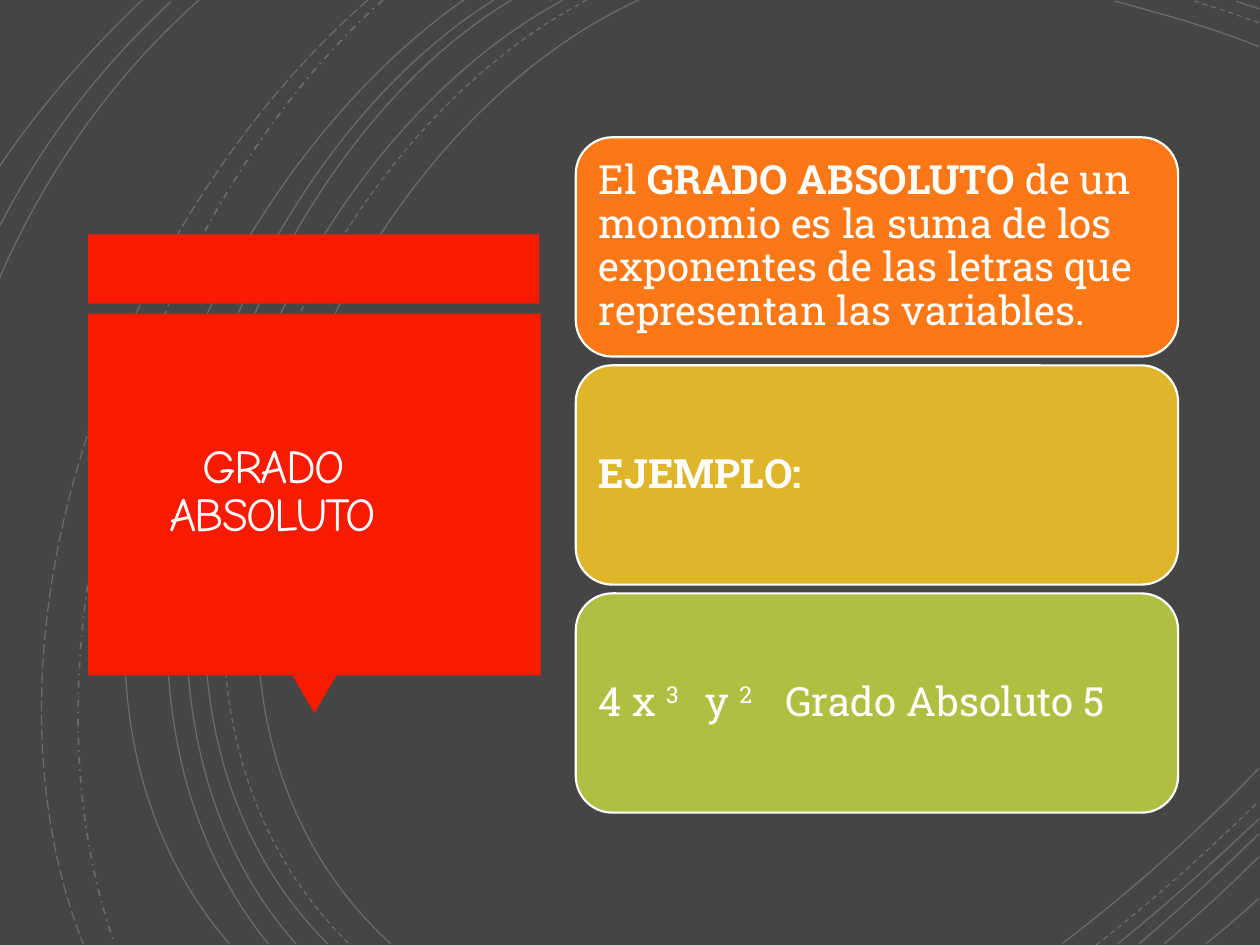
from pptx import Presentation
from pptx.dml.color import RGBColor
from pptx.enum.dml import MSO_LINE as Dash
from pptx.enum.shapes import MSO_SHAPE as Shape
from pptx.enum.text import MSO_ANCHOR as Anchor, PP_ALIGN as Align
from pptx.oxml.ns import qn
from pptx.util import Inches, Pt
from lxml.etree import SubElement

WHITE = RGBColor(0xFF, 0xFF, 0xFF)
CREAM = RGBColor(0xFF, 0xFE, 0xFF)
DARK = RGBColor(0x45, 0x45, 0x45)
RED = RGBColor(0xF8, 0x1B, 0x02)
ORANGE = RGBColor(0xFC, 0x77, 0x15)
GOLD = RGBColor(0xDF, 0xB6, 0x2A)
GREEN = RGBColor(0xAF, 0xBF, 0x41)
HEAD, BODY = "Comic Neue", "Roboto Slab"

ARCS = [
    ((5.07, 0), (2.56, 1.15), (0.83, 5.4), (3.1, 7.49)),
    ((9.99, 0.37), (9.62, 0.22), (9.22, 0.11), (8.85, 0.01)),
    ((8.43, 7.49), (8.98, 7.07), (9.51, 6.6), (9.99, 6.1)),
    ((4.47, 0), (2.11, 1.27), (0.5, 5.37), (2.6, 7.49)),
    ((9.99, 0.07), (9.93, 0.05), (9.87, 0.03), (9.81, 0.01)),
    ((8.87, 7.49), (9.26, 7.18), (9.63, 6.84), (9.99, 6.5)),
    ((4.06, 0), (1.85, 1.33), (0.5, 5.41), (2.35, 7.49)),
    ((9.04, 7.49), (9.37, 7.21), (9.68, 6.92), (9.99, 6.62)),
    ((3.92, 0), (1.72, 1.38), (0.38, 5.34), (2.13, 7.49)),
    ((9.24, 7.49), (9.5, 7.27), (9.75, 7.04), (9.99, 6.8)),
    ((3.68, 0), (1.58, 1.47), (-0.07, 5.29), (1.82, 7.49)),
    ((9.57, 7.49), (9.71, 7.38), (9.85, 7.26), (9.99, 7.13)),
    ((1.58, 0), (0.88, 0.62), (0.35, 1.39), (-0.01, 2.22)),
    ((1.36, 0.01), (0.79, 0.54), (0.33, 1.14), (-0.01, 1.81)),
    ((1.13, 0), (0.71, 0.4), (0.32, 0.84), (-0.01, 1.33)),
]
DASHED = [
    ((4.66, 0), (2.26, 1.25), (0.63, 5.38), (2.77, 7.49)),
    ((9.99, 0.18), (9.82, 0.12), (9.65, 0.06), (9.48, 0.01)),
    ((8.7, 7.5), (9.15, 7.15), (9.58, 6.76), (9.99, 6.36)),
]
DOTTED = ((3.04, 0), (1.17, 1.66), (0.06, 5.09), (0.91, 7.49))
LONG = ((2.92, 0), (0.98, 1.69), (-0.31, 4.99), (0.66, 7.49))

CARDS = [
    (ORANGE, [("El ", {}), ("GRADO ABSOLUTO", {"bold": True}),
              (" de un monomio es la suma de los exponentes de las letras"
               " que representan las variables.", {})]),
    (GOLD, [("EJEMPLO:", {"bold": True})]),
    (GREEN, [("4 x ", {}), ("3", {"base": 30}), ("\ty ", {}),
             ("2", {"base": 30}), ("\tGrado Absoluto 5", {})]),
]
STOPS = (0.85, 1.48)


def add_run(para, text, font=BODY, size=23, color=WHITE, bold=False,
            base=0, space=0):
    run = para.add_run()
    run.text = text
    run.font.name, run.font.size, run.font.bold = font, Pt(size), bold
    run.font.color.rgb = color
    props = run.font._element
    if base:
        props.set("baseline", str(base * 1000))
    if space:
        props.set("spc", str(round(space * 100)))


def set_tabs(para, stops):
    tabs = SubElement(para._p.get_or_add_pPr(), qn("a:tabLst"))
    for stop in stops:
        SubElement(tabs, qn("a:tab"), pos=str(Inches(stop)), algn="l")


def bend(curve):
    route = curve._element.find(".//" + qn("a:path"))
    legs = route.findall(qn("a:lnTo"))
    cubic = SubElement(route, qn("a:cubicBezTo"))
    for leg in legs:
        cubic.append(leg[0])
        route.remove(leg)


class Deck:
    def __init__(self):
        self.show = Presentation()
        self.show.slide_width, self.show.slide_height = Inches(10), Inches(7.5)
        self.slide = self.show.slides.add_slide(self.show.slide_layouts[6])
        fill = self.slide.background.fill
        fill.solid()
        fill.fore_color.rgb = DARK

    def arc(self, ends, dash=None, width=0.75):
        start, *rest = [(Inches(x), Inches(y)) for x, y in ends]
        pen = self.slide.shapes.build_freeform(*start)
        pen.add_line_segments(rest, close=False)
        curve = pen.convert_to_shape()
        bend(curve)
        curve.shadow.inherit = False
        curve.fill.background()
        line = curve.line
        line.color.rgb = WHITE
        line.width = Pt(width)
        if dash:
            line.dash_style = dash
        tint = line._ln.find(".//" + qn("a:srgbClr"))
        SubElement(tint, qn("a:alpha"), val="20000")

    def block(self, kind, box, color, edge=None, turn=0):
        block = self.slide.shapes.add_shape(kind, *map(Inches, box))
        block.shadow.inherit = False
        block.fill.solid()
        block.fill.fore_color.rgb = color
        block.rotation = turn
        if edge:
            block.line.color.rgb = WHITE
            block.line.width = Pt(edge)
        else:
            block.line.fill.background()
        return block

    def frame(self, shape, inset, align, space):
        frame = shape.text_frame
        frame.word_wrap = True
        frame.vertical_anchor = Anchor.MIDDLE
        frame.margin_left = frame.margin_right = Inches(inset)
        frame.margin_top = frame.margin_bottom = Inches(inset)
        para = frame.paragraphs[0]
        para.alignment, para.line_spacing = align, space
        return para

    def title(self, text, box):
        shape = self.slide.shapes.add_textbox(*map(Inches, box))
        para = self.frame(shape, 0.25, Align.CENTER, 0.85)
        add_run(para, text, font=HEAD, size=27, color=CREAM, space=-1.1)

    def card(self, box, color, runs):
        shape = self.block(Shape.ROUNDED_RECTANGLE, box, color, edge=1.25)
        para = self.frame(shape, 0.1, Align.LEFT, 0.9)
        if any("\t" in text for text, _ in runs):
            set_tabs(para, STOPS)
        for text, style in runs:
            add_run(para, text, **style)


def main():
    deck = Deck()
    for ends in ARCS:
        deck.arc(ends)
    for ends in DASHED:
        deck.arc(ends, Dash.DASH)
    deck.arc(DOTTED, Dash.DASH_DOT, 1)
    deck.arc(LONG, Dash.LONG_DASH)

    deck.block(Shape.RECTANGLE, (0.7, 1.86, 3.58, 0.55), RED)
    deck.block(Shape.ISOSCELES_TRIANGLE, (2.32, 5.36, 0.35, 0.3), RED, turn=180)
    deck.block(Shape.RECTANGLE, (0.7, 2.49, 3.59, 2.87), RED)
    deck.title("GRADO ABSOLUTO", (0.73, 2.57, 2.87, 2.69))

    for n, (color, runs) in enumerate(CARDS):
        deck.card((4.57, 1.09 + n * 1.81, 4.78, 1.74), color, runs)
    deck.show.save("out.pptx")


if __name__ == "__main__":
    main()
